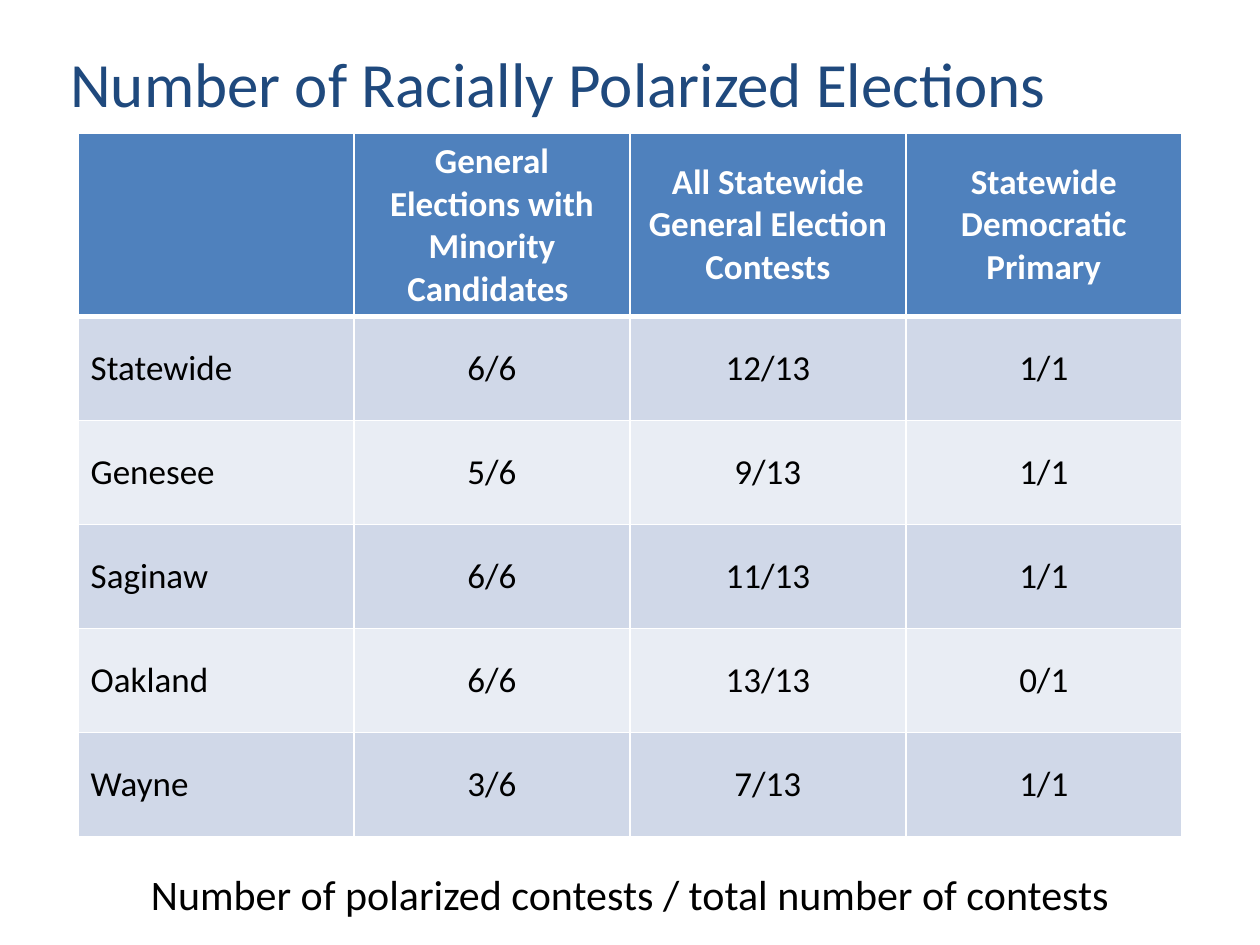
from lxml.etree import SubElement
from pptx import Presentation
from pptx.dml.color import RGBColor
from pptx.enum.text import MSO_ANCHOR, PP_ALIGN
from pptx.oxml.ns import qn
from pptx.util import Inches, Pt

HEADER = ["", "General Elections with Minority Candidates ",
          "All Statewide General Election Contests", "Statewide Democratic Primary"]
COUNTIES = [
    ["Statewide", "6/6", "12/13", "1/1"],
    ["Genesee", "5/6", "9/13", "1/1"],
    ["Saginaw", "6/6", "11/13", "1/1"],
    ["Oakland", "6/6", "13/13", "0/1"],
    ["Wayne", "3/6", "7/13", "1/1"],
]
HEADER_FILL = "4F81BD"
BAND_FILLS = ["D0D8E8", "E9EDF4"]
WHITE, BLACK, NAVY = "FFFFFF", "000000", "1F497D"
HEADER_HEIGHT = 1.45


def color(value):
    return RGBColor.from_string(value)


def write(frame, text, size, ink, align=PP_ALIGN.LEFT, bold=False):
    para = frame.paragraphs[0]
    para.alignment = align
    span = para.add_run()
    span.text = text
    span.font.name = "Calibri"
    span.font.size = Pt(size)
    span.font.bold = bold
    span.font.color.rgb = color(ink)
    return para


def add_text(page, left, top, width, height, anchor, *style):
    box = page.shapes.add_textbox(Inches(left), Inches(top), Inches(width), Inches(height))
    box.text_frame.word_wrap = True
    box.text_frame.vertical_anchor = anchor
    return write(box.text_frame, *style)


def set_borders(cell, bottom=1, top=1):
    """Draw white cell borders, widths in points; call before setting the fill."""
    properties = cell._tc.get_or_add_tcPr()
    for side, width in (("L", 1), ("R", 1), ("T", top), ("B", bottom)):
        line = SubElement(properties, qn(f"a:ln{side}"), w=str(Pt(width)))
        fill = SubElement(line, qn("a:solidFill"))
        SubElement(fill, qn("a:srgbClr"), val=WHITE)


def add_results_table(page, left, top, width, height):
    rows = [HEADER] + COUNTIES
    table = page.shapes.add_table(len(rows), len(HEADER), Inches(left), Inches(top),
                                  Inches(width), Inches(height)).table
    for column in table.columns:
        column.width = Inches(width / len(HEADER))
    body_height = (height - HEADER_HEIGHT) / len(COUNTIES)
    for r, values in enumerate(rows):
        is_header = r == 0
        table.rows[r].height = Inches(HEADER_HEIGHT if is_header else body_height)
        for c, value in enumerate(values):
            cell = table.cell(r, c)
            set_borders(cell, bottom=3 if is_header else 1, top=3 if r == 1 else 1)
            cell.fill.solid()
            cell.fill.fore_color.rgb = color(HEADER_FILL if is_header else BAND_FILLS[(r - 1) % 2])
            cell.vertical_anchor = MSO_ANCHOR.MIDDLE
            if value:
                write(cell.text_frame, value, 20, WHITE if is_header else BLACK,
                      PP_ALIGN.CENTER if c else PP_ALIGN.LEFT, is_header)


def main():
    deck = Presentation()
    deck.slide_width, deck.slide_height = Inches(10), Inches(7.5)
    page = deck.slides.add_slide(deck.slide_layouts[6])
    title = add_text(page, 0.46, 0.33, 8.54, 0.72, MSO_ANCHOR.MIDDLE,
                     "Number of Racially Polarized Elections", 36, NAVY)
    title.line_spacing = 0.89
    add_results_table(page, 0.62, 1.06, 8.76, 5.58)
    add_text(page, 0, 6.84, 10, 0.5, MSO_ANCHOR.TOP,
             "Number of polarized contests / total number of contests", 24, BLACK, PP_ALIGN.CENTER)
    deck.save("out.pptx")


if __name__ == "__main__":
    main()
